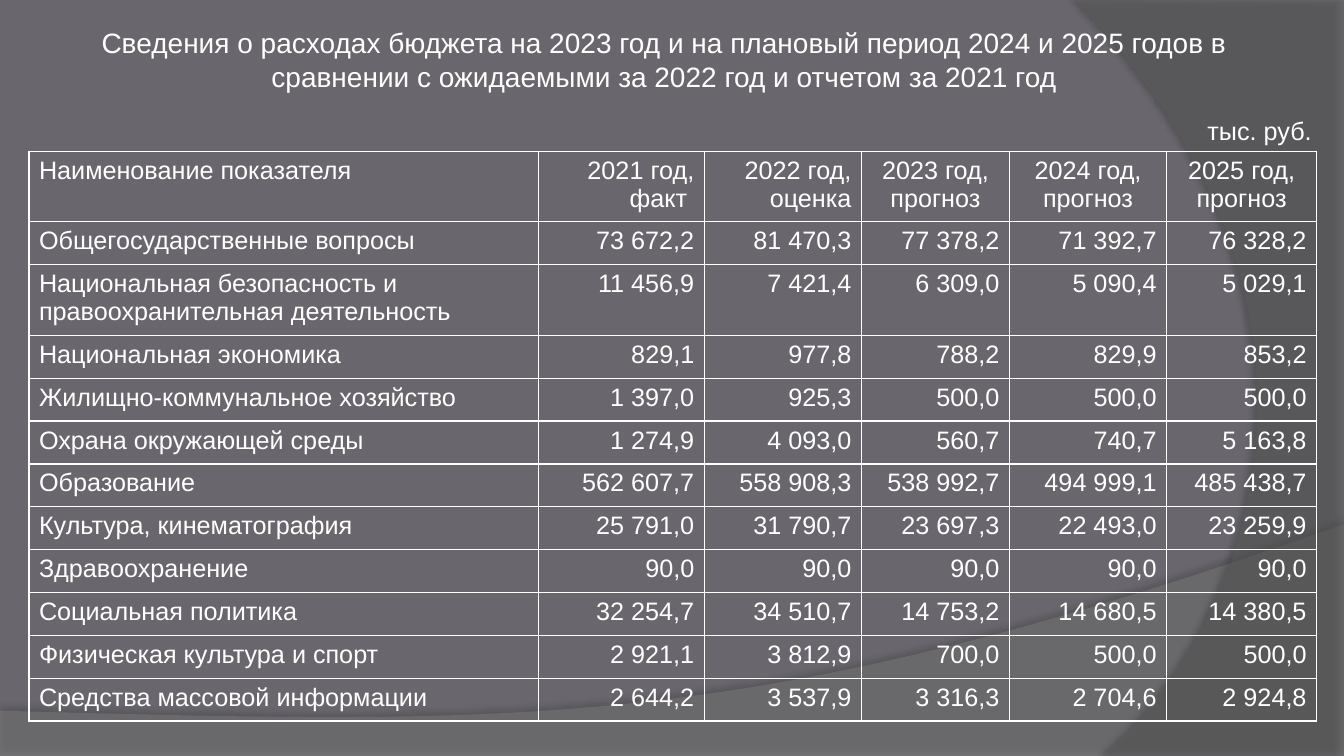
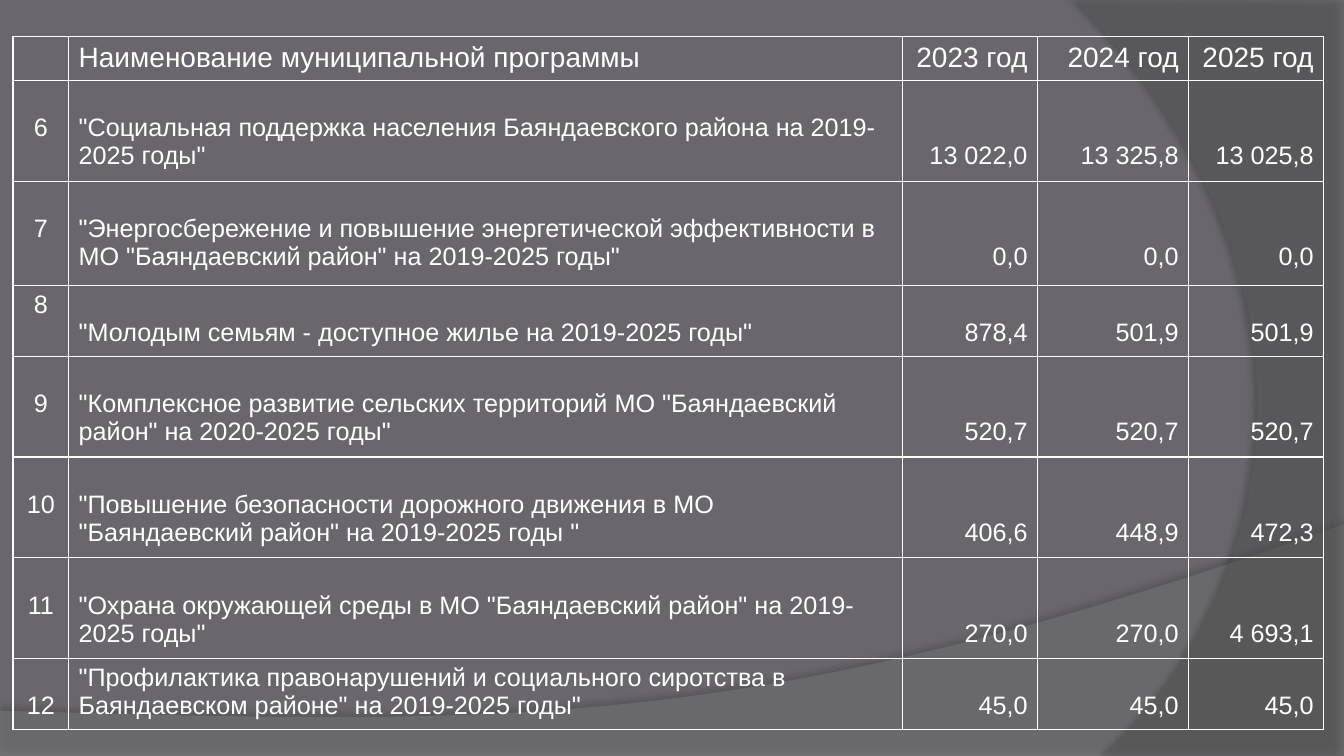
from lxml import etree
from pptx import Presentation
from pptx.dml.color import RGBColor
from pptx.enum.text import MSO_ANCHOR, MSO_AUTO_SIZE, PP_ALIGN
from pptx.oxml.ns import qn
from pptx.util import Cm, Pt

LEFT, CENTER, RIGHT = PP_ALIGN.LEFT, PP_ALIGN.CENTER, PP_ALIGN.RIGHT
MIDDLE = MSO_ANCHOR.MIDDLE
NO_AUTOFIT = MSO_AUTO_SIZE.NONE
TITLE_ONLY, BLANK = 5, 6

# Shared look, lengths in centimetres
WIDTH, HEIGHT = 33.87, 19.05
FONT, WHITE, BACKGROUND = "Arial", "FFFFFF", "69676D"
TEXT_SIZE, LARGE_SIZE = 18, 20
CELL_MARGIN, TEXT_LINE = 0.13, 0.71
SINGLE_ROW, DOUBLE_ROW = 1.08, 1.78

# Background bands: straight corners, then one curve from the last corner
BANDS = [
    dict(fill="7F7F7F", opacity=45,
         corners=[(0, 17.91), (0, HEIGHT), (WIDTH, HEIGHT), (WIDTH, 13.21)],
         curve=[(18.92, 18.52), (13.23, 18.26), (0, 17.91)],
         shadow=dict(opacity=35, distance=3.5, angle=270)),
    dict(fill="5E5E5E", opacity=40,
         corners=[(WIDTH, 0.05), (WIDTH, HEIGHT), (27.81, HEIGHT)],
         curve=[(31.65, 15.72), (34.47, 7.62), (27.1, 0)],
         shadow=dict(opacity=45, distance=4, angle=180)),
]

# Slide 1: expenses
TITLE = ("Сведения о расходах бюджета на 2023 год и на плановый период 2024 и 2025 годов "
         "в сравнении с ожидаемыми за 2022 год и отчетом за 2021 год")
UNIT = "тыс. руб."
EXPENSE_COLUMNS = [12.85, 4.17, 3.96, 3.73, 3.96, 3.78]
EXPENSE_HEADER = ["Наименование показателя", "2021 год, факт ", "2022 год, оценка",
                  "2023 год, прогноз", "2024 год, прогноз", "2025 год, прогноз"]
EXPENSE_HEADER_ALIGN = [LEFT, RIGHT, RIGHT, CENTER, CENTER, CENTER]
EXPENSES = [
    ("Общегосударственные вопросы", "73 672,2", "81 470,3", "77 378,2", "71 392,7", "76 328,2"),
    ("Национальная безопасность и правоохранительная деятельность",
     "11 456,9", "7 421,4", "6 309,0", "5 090,4", "5 029,1"),
    ("Национальная экономика", "829,1", "977,8", "788,2", "829,9", "853,2"),
    ("Жилищно-коммунальное хозяйство", "1 397,0", "925,3", "500,0", "500,0", "500,0"),
    ("Охрана окружающей среды", "1 274,9", "4 093,0", "560,7", "740,7", "5 163,8"),
    ("Образование", "562 607,7", "558 908,3", "538 992,7", "494 999,1", "485 438,7"),
    ("Культура, кинематография", "25 791,0", "31 790,7", "23 697,3", "22 493,0", "23 259,9"),
    ("Здравоохранение", "90,0", "90,0", "90,0", "90,0", "90,0"),
    ("Социальная политика", "32 254,7", "34 510,7", "14 753,2", "14 680,5", "14 380,5"),
    ("Физическая культура и спорт", "2 921,1", "3 812,9", "700,0", "500,0", "500,0"),
    ("Средства массовой информации", "2 644,2", "3 537,9", "3 316,3", "2 704,6", "2 924,8"),
]
TWO_LINE_EXPENSE = 1

# Slide 2: programmes as (row height, lines above number, name and values, cells)
PROGRAM_COLUMNS = [1.4, 21.02, 3.4, 3.81, 3.4]
PROGRAM_HEADER = ["", "Наименование муниципальной программы", "2023 год", "2024 год", "2025 год"]
PROGRAM_HEADER_HEIGHT = 1.09
PROGRAMS = [
    (2.54, (1, 1, 2), ("6", '"Социальная поддержка населения Баяндаевского района на 2019-2025 годы"',
                       "13 022,0", "13 325,8", "13 025,8")),
    (2.62, (1, 1, 2), ("7", '"Энергосбережение и повышение энергетической эффективности в '
                            'МО "Баяндаевский район" на 2019-2025 годы"', "0,0", "0,0", "0,0")),
    (1.79, (0, 1, 1), ("8", '"Молодым семьям - доступное жилье на 2019-2025 годы"',
                       "878,4", "501,9", "501,9")),
    (2.54, (1, 1, 2), ("9", '"Комплексное развитие сельских территорий МО "Баяндаевский район" '
                            'на 2020-2025 годы"', "520,7", "520,7", "520,7")),
    (2.54, (1, 1, 2), ("10", '"Повышение безопасности дорожного движения в МО "Баяндаевский район" '
                             'на 2019-2025 годы "', "406,6", "448,9", "472,3")),
    (2.54, (1, 1, 2), ("11", '"Охрана окружающей среды в МО "Баяндаевский район" на 2019-2025 годы"',
                       "270,0", "270,0", "4 693,1")),
    (1.79, (1, 0, 1), ("12", '"Профилактика правонарушений и социального сиротства в '
                             'Баяндаевском районе" на 2019-2025 годы"', "45,0", "45,0", "45,0")),
]


def color(hex_text):
    return RGBColor.from_string(hex_text)


def write(frame, text, size=TEXT_SIZE, align=LEFT):
    para = frame.paragraphs[0]
    para.alignment = align
    span = para.add_run()
    span.text = text
    span.font.name = FONT
    span.font.size = Pt(size)
    span.font.color.rgb = color(WHITE)


def place(box, left, top, width, height):
    box.left, box.top, box.width, box.height = Cm(left), Cm(top), Cm(width), Cm(height)


def set_opacity(color_element, percent):
    etree.SubElement(color_element, qn("a:alpha"), val=str(percent * 1000))


def curve_points(start, first, second, end, steps=32):
    """Points along a cubic curve, without its start."""
    for step in range(1, steps + 1):
        t = step / steps
        weights = ((1 - t) ** 3, 3 * t * (1 - t) ** 2, 3 * t * t * (1 - t), t ** 3)
        knots = (start, first, second, end)
        yield tuple(sum(w * knot[axis] for w, knot in zip(weights, knots)) for axis in (0, 1))


def add_band(slide, fill, opacity, corners, curve, shadow):
    outline = corners + list(curve_points(corners[-1], *curve))
    points = [(Cm(x), Cm(y)) for x, y in outline]
    builder = slide.shapes.build_freeform(*points[0])
    builder.add_line_segments(points[1:], close=True)
    band = builder.convert_to_shape()
    band.fill.solid()
    band.fill.fore_color.rgb = color(fill)
    band.line.fill.background()
    band.shadow.inherit = False
    properties = band.element.spPr
    set_opacity(properties.find(qn("a:solidFill")).find(qn("a:srgbClr")), opacity)
    outer = etree.SubElement(properties.find(qn("a:effectLst")), qn("a:outerShdw"),
                             blurRad=str(Pt(4)), dist=str(Pt(shadow["distance"])),
                             dir=str(shadow["angle"] * 60000), algn="ctr", rotWithShape="0")
    set_opacity(etree.SubElement(outer, qn("a:srgbClr"), val="000000"), shadow["opacity"])
    return band


def dress_master(deck, slide):
    """Give the slide master its background and bands, drawn by way of a slide."""
    master = deck.slide_master
    master.background.fill.solid()
    master.background.fill.fore_color.rgb = color(BACKGROUND)
    for index, band in enumerate(BANDS):
        shape = add_band(slide, **band)
        shape.element.nvSpPr.cNvPr.set("id", str(100 + index))
        master.shapes.element.insert(2 + index, shape.element)


def add_borders(cell):
    properties = cell._tc.get_or_add_tcPr()
    for side in ("lnL", "lnR", "lnT", "lnB"):
        line = etree.SubElement(properties, qn("a:" + side), w=str(Pt(1)))
        fill = etree.SubElement(line, qn("a:solidFill"))
        etree.SubElement(fill, qn("a:srgbClr"), val=WHITE)


def add_grid(slide, left, top, columns, rows):
    """rows: (height, text size, cells); each cell is (text, alignment, lines above)."""
    total = sum(row[0] for row in rows)
    table = slide.shapes.add_table(len(rows), len(columns), Cm(left), Cm(top),
                                   Cm(sum(columns)), Cm(total)).table
    table.first_row = table.horz_banding = False
    for column, width in zip(table.columns, columns):
        column.width = Cm(width)
    for r, (height, size, cells) in enumerate(rows):
        table.rows[r].height = Cm(height)
        for c, (text, align, lines_above) in enumerate(cells):
            cell = table.cell(r, c)
            add_borders(cell)
            cell.fill.background()
            cell.margin_top = Cm(CELL_MARGIN + lines_above * TEXT_LINE)
            cell.margin_bottom = Cm(CELL_MARGIN)
            if text:
                write(cell.text_frame, text, size=size, align=align)


def build_expenses(slide):
    title = slide.shapes.title
    place(title, 2.24, 0.52, 29, 1.96)
    frame = title.text_frame
    frame.auto_size = NO_AUTOFIT
    frame.vertical_anchor = MIDDLE
    write(frame, TITLE, size=LARGE_SIZE, align=CENTER)

    rows = [(DOUBLE_ROW, TEXT_SIZE,
             [(text, align, 0) for text, align in zip(EXPENSE_HEADER, EXPENSE_HEADER_ALIGN)])]
    for index, (name, *values) in enumerate(EXPENSES):
        height = DOUBLE_ROW if index == TWO_LINE_EXPENSE else SINGLE_ROW
        rows.append((height, TEXT_SIZE,
                     [(name, LEFT, 0)] + [(value, RIGHT, 0) for value in values]))
    add_grid(slide, 0.73, 3.81, EXPENSE_COLUMNS, rows)

    unit = slide.shapes.add_textbox(Cm(30.18), Cm(2.79), Cm(3.18), Cm(1.02))
    unit.text_frame.word_wrap = False
    write(unit.text_frame, UNIT)


def build_programs(slide):
    aligns = [CENTER, LEFT, RIGHT, RIGHT, RIGHT]
    rows = [(PROGRAM_HEADER_HEIGHT, LARGE_SIZE,
             [(text, align, 0) for text, align in zip(PROGRAM_HEADER, aligns)])]
    for height, (above_number, above_name, above_value), texts in PROGRAMS:
        lines_above = [above_number, above_name] + [above_value] * 3
        rows.append((height, TEXT_SIZE, list(zip(texts, aligns, lines_above))))
    add_grid(slide, 0.33, 0.92, PROGRAM_COLUMNS, rows)


def main():
    deck = Presentation()
    deck.slide_width, deck.slide_height = Cm(WIDTH), Cm(HEIGHT)
    expenses = deck.slides.add_slide(deck.slide_layouts[TITLE_ONLY])
    dress_master(deck, expenses)
    build_expenses(expenses)
    build_programs(deck.slides.add_slide(deck.slide_layouts[BLANK]))
    deck.save("out.pptx")


if __name__ == "__main__":
    main()
